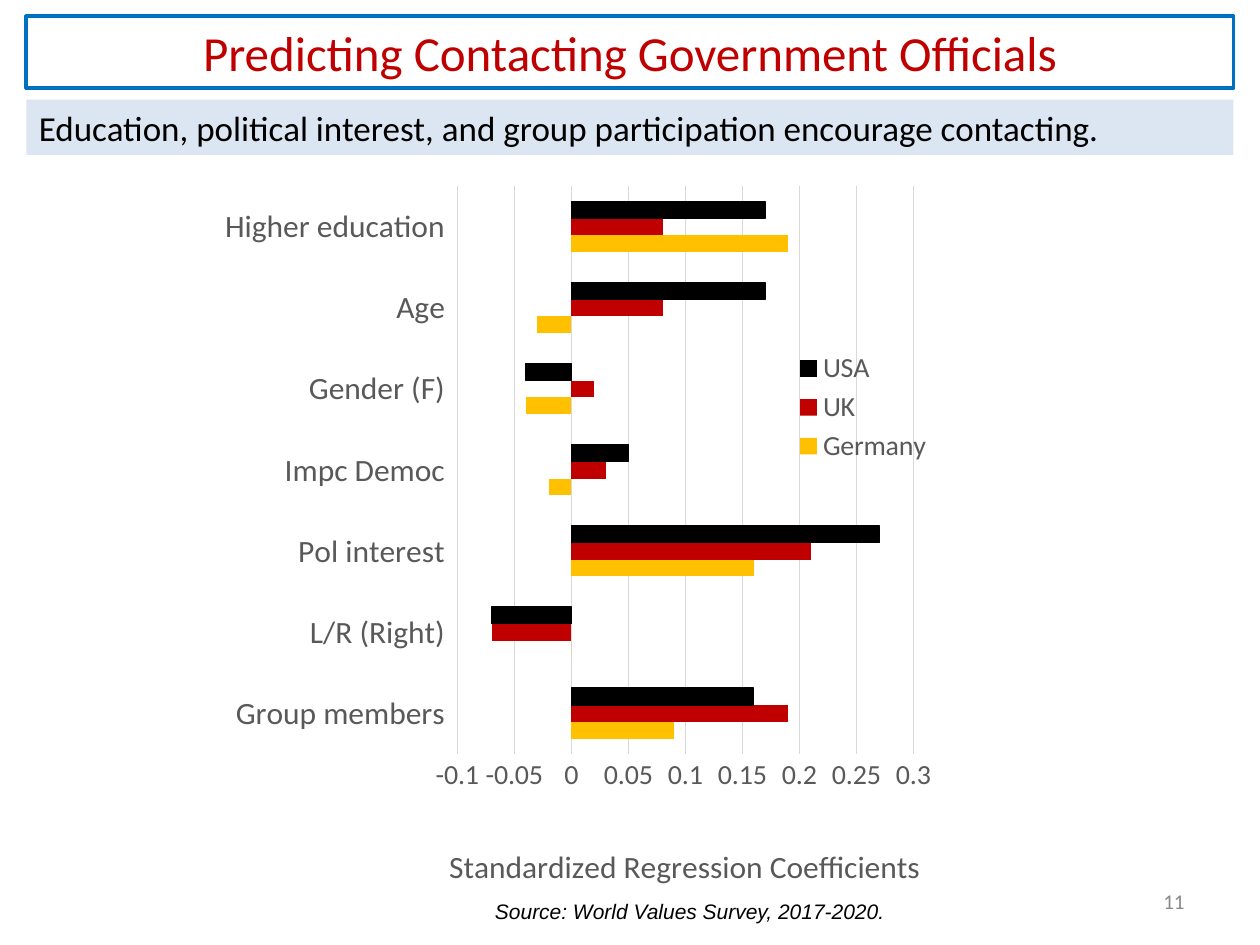
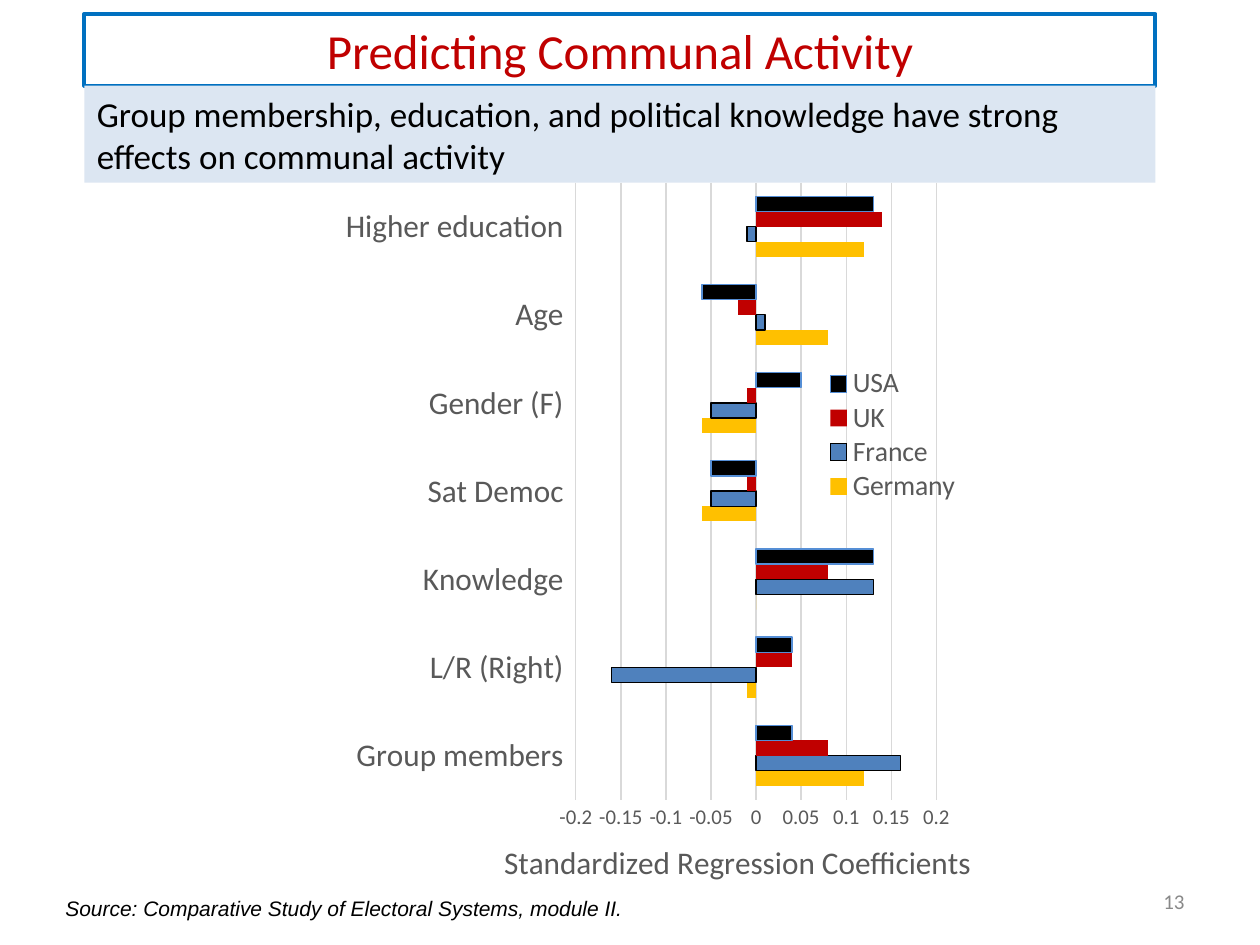
import pptx
import pptx.chart.data
import pptx.dml.color
import pptx.enum.chart
import pptx.enum.shapes
import pptx.enum.text
import pptx.oxml
import pptx.oxml.ns
import pptx.util

Inches = pptx.util.Inches
Pt = pptx.util.Pt
Align = pptx.enum.text.PP_ALIGN
ChartEnum = pptx.enum.chart

BLUE, RED, PALE, GOLD = "0070C0", "C00000", "DCE6F2", "FFC000"
BLACK, GREY, GRID, NUMBER_GREY = "000000", "595959", "D9D9D9", "898989"
TITLE = {"size": Pt(28), "name": "Calibri", "color": RED}
FINDING = {"size": Pt(20), "name": "Calibri", "color": BLACK}
SOURCE = {"size": Pt(12), "name": "Arial", "italic": True, "color": BLACK}
NUMBER = {"size": Pt(12), "name": "Calibri", "color": NUMBER_GREY}
SERIES_STYLES = {
    "Germany": {"fill": GOLD},
    "France": {"fill": "4F81BD", "line": BLACK},
    "UK": {"fill": RED},
    "USA": {"fill": BLACK, "line": BLACK},
}

CONTACTING = {
    "title": "Predicting Contacting Government Officials",
    "title_box": (0.21, 0.13, 9.58, 0.57),
    "finding": "Education, political interest, and group participation encourage contacting.",
    "finding_box": (0.21, 0.79, 9.58, 0.44),
    "chart_box": (1.67, 1.37, 5.83, 5.74),
    "categories": ["Group members", "L/R (Right)", "Pol interest", "Impc Democ",
                   "Gender (F)", "Age", "Higher education"],
    "series": {
        "Germany": [0.09, 0, 0.16, -0.02, -0.04, -0.03, 0.19],
        "UK": [0.19, -0.07, 0.21, 0.03, 0.02, 0.08, 0.08],
        "USA": [0.16, -0.07, 0.27, 0.05, -0.04, 0.17, 0.17],
    },
    "scale": (-0.1, 0.3),
    "value_size": 16,
    "plot_box": (1.96, 0.11, 3.62, 4.57),
    "legend_box": (4.63, 1.4, 1.1, 0.98),
    "axis_title_at": (1.85, 5.37),
    "source": "Source: World Values Survey, 2017-2020.",
    "source_box": (3.83, 7.08, 3.42, 0.3),
    "number": "11",
}
COMMUNAL = {
    "title": "Predicting Communal Activity",
    "title_box": (0.67, 0.11, 8.5, 0.57),
    "finding": "Group membership, education, and political knowledge have strong "
               "effects on communal activity",
    "finding_box": (0.67, 0.68, 8.5, 0.77),
    "chart_box": (2.54, 1.2, 5.21, 5.88),
    "categories": ["Group members", "L/R (Right)", "Knowledge", "Sat Democ",
                   "Gender (F)", "Age", "Higher education"],
    "series": {
        "Germany": [0.12, -0.01, 0, -0.06, -0.06, 0.08, 0.12],
        "France": [0.16, -0.16, 0.13, -0.05, -0.05, 0.01, -0.01],
        "UK": [0.08, 0.04, 0.08, -0.01, -0.01, -0.02, 0.14],
        "USA": [0.04, 0.04, 0.13, -0.05, 0.05, -0.06, 0.13],
    },
    "usa_line": "558ED5",
    "scale": (-0.2, 0.2),
    "value_size": 12,
    "plot_box": (2.05, 0.25, 2.89, 4.9),
    "legend_box": (4.04, 1.71, 1.1, 1.09),
    "axis_title_at": (1.43, 5.43),
    "source": "Source: Comparative Study of Electoral Systems, module II.",
    "source_box": (0.42, 7.06, 6.5, 0.3),
    "number": "13",
}


def rgb(value):
    return pptx.dml.color.RGBColor.from_string(value)


def style_font(font, formats):
    for attribute, value in formats.items():
        if attribute == "color":
            font.color.rgb = rgb(value)
        else:
            setattr(font, attribute, value)


def style_line(line, color, width=0.75):
    if color:
        line.color.rgb = rgb(color)
        line.width = Pt(width)
    else:
        line.fill.background()


def write(shape, text, formats, alignment=Align.LEFT):
    frame = shape.text_frame
    frame.word_wrap = True
    frame.vertical_anchor = pptx.enum.text.MSO_ANCHOR.MIDDLE
    paragraph = frame.paragraphs[0]
    paragraph.alignment = alignment
    run = paragraph.add_run()
    run.text = text
    style_font(run.font, formats)


def add_band(slide, box, text, formats, alignment, fill=None, line=None):
    band = slide.shapes.add_shape(
        pptx.enum.shapes.MSO_SHAPE.RECTANGLE, *map(Inches, box))
    band.shadow.inherit = False
    if fill:
        band.fill.solid()
        band.fill.fore_color.rgb = rgb(fill)
    else:
        band.fill.background()
    style_line(band.line, line, 2.25)
    write(band, text, formats, alignment)


def add_text(slide, box, text, formats, alignment=Align.LEFT):
    write(slide.shapes.add_textbox(*map(Inches, box)), text, formats, alignment)


def place_chart_part(element, index, box, chart_box, inner=False):
    """Fix a chart part at a box in inches, measured from the chart's corner."""
    for layout in element.findall(pptx.oxml.ns.qn("c:layout")):
        element.remove(layout)
    names = "xywh"[:len(box)]
    tags = '<c:layoutTarget val="inner"/>' if inner else ""
    tags += '<c:xMode val="edge"/><c:yMode val="edge"/>'
    for name, length, whole in zip(names, box, chart_box[2:] * 2):
        tags += f'<c:{name} val="{length / whole:.4f}"/>'
    element.insert(index, pptx.oxml.parse_xml(
        f'<c:layout {pptx.oxml.ns.nsdecls("c")}>'
        f"<c:manualLayout>{tags}</c:manualLayout></c:layout>"))


def style_axes(chart, content):
    category_axis, value_axis = chart.category_axis, chart.value_axis
    for axis, size in ((category_axis, 18), (value_axis, content["value_size"])):
        axis.major_tick_mark = axis.minor_tick_mark = ChartEnum.XL_TICK_MARK.NONE
        style_font(axis.tick_labels.font,
                   {"size": Pt(size), "name": "Calibri", "color": GREY})
    category_axis.tick_label_position = ChartEnum.XL_TICK_LABEL_POSITION.LOW
    style_line(category_axis.format.line, GRID)
    style_line(value_axis.format.line, None)
    value_axis.minimum_scale, value_axis.maximum_scale = content["scale"]
    value_axis.major_unit = 0.05
    value_axis.has_major_gridlines = True
    style_line(value_axis.major_gridlines.format.line, GRID)
    value_axis.tick_labels.number_format = "General"
    value_axis.tick_labels.number_format_is_linked = False

    run = value_axis.axis_title.text_frame.paragraphs[0].add_run()
    run.text = "Standardized Regression Coefficients"
    style_font(run.font, {"size": Pt(18), "name": "Calibri", "bold": False, "color": GREY})


def add_coefficient_chart(slide, box, content):
    data = pptx.chart.data.CategoryChartData()
    data.categories = content["categories"]
    for name, values in content["series"].items():
        data.add_series(name, values)
    chart = slide.shapes.add_chart(
        ChartEnum.XL_CHART_TYPE.BAR_CLUSTERED, *map(Inches, box), data).chart
    chart.has_title = False
    style_font(chart.font, {"size": Pt(16), "name": "Calibri", "color": BLACK})
    style_axes(chart, content)

    plot = chart.plots[0]
    plot.gap_width = 182
    plot.vary_by_categories = False
    for series in plot.series:
        style = SERIES_STYLES[series.name]
        line = style.get("line")
        if series.name == "USA":
            line = content.get("usa_line", line)
        series.invert_if_negative = False
        series.format.fill.solid()
        series.format.fill.fore_color.rgb = rgb(style["fill"])
        style_line(series.format.line, line)

    chart.has_legend = True
    legend = chart.legend
    legend.position = ChartEnum.XL_LEGEND_POSITION.CORNER
    legend.include_in_layout = True
    style_font(legend.font, {"size": Pt(16), "name": "Calibri", "color": GREY})

    plot_area = chart._chartSpace.chart.plotArea
    place_chart_part(plot_area, 0, content["plot_box"], box, inner=True)
    place_chart_part(legend._element, 1, content["legend_box"], box)
    place_chart_part(chart.value_axis.axis_title._element, 1,
                     content["axis_title_at"], box)


def add_prediction_slide(presentation, content):
    slide = presentation.slides.add_slide(presentation.slide_layouts[6])
    add_band(slide, content["title_box"], content["title"], TITLE,
             Align.CENTER, line=BLUE)
    add_band(slide, content["finding_box"], content["finding"], FINDING,
             Align.LEFT, fill=PALE)
    add_coefficient_chart(slide, content["chart_box"], content)
    add_text(slide, content["source_box"], content["source"], SOURCE)
    add_text(slide, (7.17, 6.95, 2.33, 0.4), content["number"], NUMBER, Align.RIGHT)


def main():
    presentation = pptx.Presentation()
    presentation.slide_width = Inches(10)
    presentation.slide_height = Inches(7.5)
    for content in (CONTACTING, COMMUNAL):
        add_prediction_slide(presentation, content)
    presentation.save("out.pptx")


if __name__ == "__main__":
    main()
